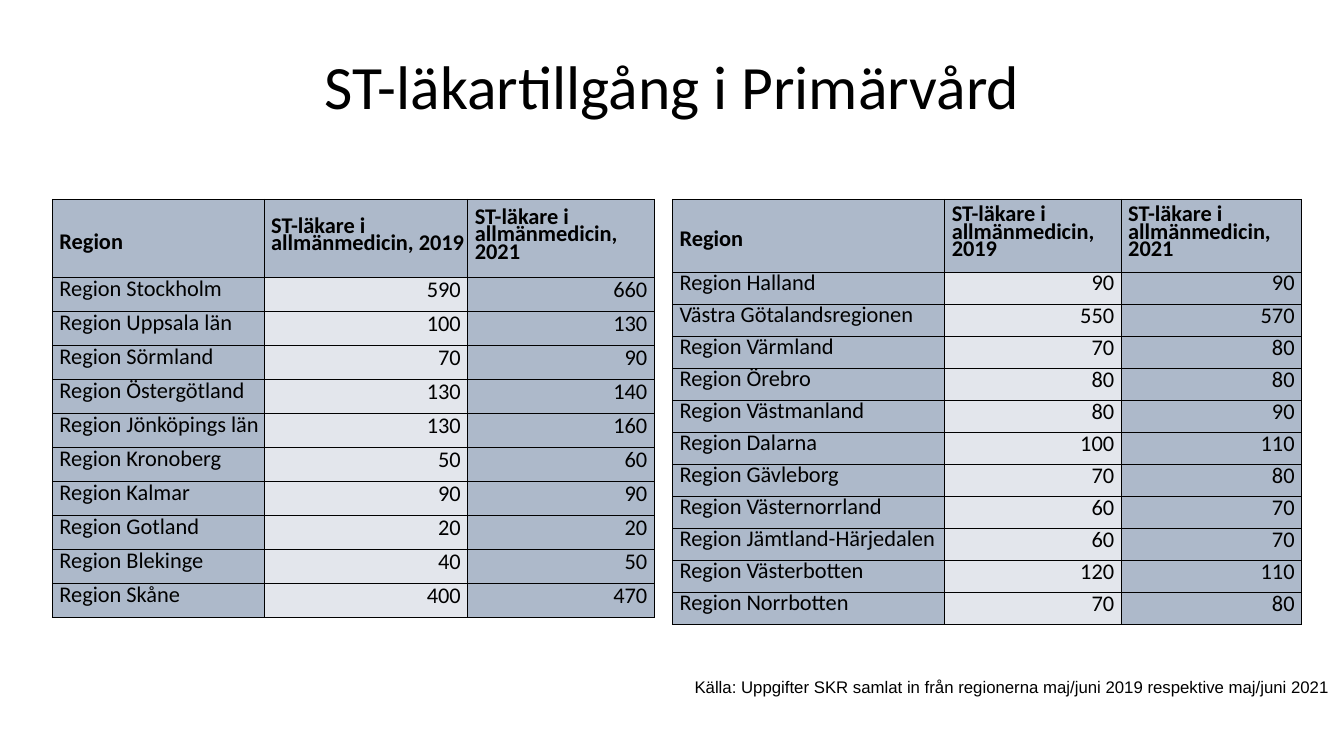
import pptx
import pptx.dml.color
import pptx.enum.text
import pptx.oxml
import pptx.oxml.ns
import pptx.util

TITLE = "ST-läkartillgång i Primärvård"
SOURCE = "Källa: Uppgifter SKR samlat in från regionerna maj/juni 2019 respektive maj/juni 2021"
HEADINGS = [
    ["Region"],
    ["ST-läkare i", "allmänmedicin, 2019"],
    ["ST-läkare i", "allmänmedicin, 2021"],
]
TABLES = [
    {
        "left": 0.52, "height": 4.15, "header": 0.77, "columns": [2.1, 2.02, 1.85],
        "rows": [
            ("Region Stockholm", 590, 660),
            ("Region Uppsala län", 100, 130),
            ("Region Sörmland", 70, 90),
            ("Region Östergötland", 130, 140),
            ("Region Jönköpings län", 130, 160),
            ("Region Kronoberg", 50, 60),
            ("Region Kalmar", 90, 90),
            ("Region Gotland", 20, 20),
            ("Region Blekinge", 40, 50),
            ("Region Skåne", 400, 470),
        ],
    },
    {
        "left": 6.67, "height": 4.22, "header": 0.72, "columns": [2.7, 1.75, 1.79],
        "rows": [
            ("Region Halland", 90, 90),
            ("Västra Götalandsregionen", 550, 570),
            ("Region Värmland", 70, 80),
            ("Region Örebro", 80, 80),
            ("Region Västmanland", 80, 90),
            ("Region Dalarna", 100, 110),
            ("Region Gävleborg", 70, 80),
            ("Region Västernorrland", 60, 70),
            ("Region Jämtland-Härjedalen", 60, 70),
            ("Region Västerbotten", 120, 110),
            ("Region Norrbotten", 70, 80),
        ],
    },
]
TABLE_TOP = 1.98
INDENT = 0.07
COLORS = {"text": "000000", "border": "000000", "blue": "ADB9CA", "pale": "E3E6EC"}

Inches = pptx.util.Inches
Pt = pptx.util.Pt
ALIGN = pptx.enum.text.PP_ALIGN
MIDDLE = pptx.enum.text.MSO_ANCHOR.MIDDLE


def color(name):
    return pptx.dml.color.RGBColor.from_string(COLORS[name])


def add_text(paragraph, text, size, font="Calibri", bold=False):
    run = paragraph.add_run()
    run.text = text
    run.font.size = Pt(size)
    run.font.name = font
    run.font.bold = bold
    run.font.color.rgb = color("text")


def add_text_box(slide, position, text, size, font, wrap):
    frame = slide.shapes.add_textbox(*map(Inches, position)).text_frame
    frame.word_wrap = wrap
    frame.vertical_anchor = MIDDLE
    add_text(frame.paragraphs[0], text, size, font)
    return frame.paragraphs[0]


def add_borders(cell):
    properties = cell._tc.get_or_add_tcPr()
    for index, side in enumerate(("lnL", "lnR", "lnT", "lnB")):
        properties.insert(index, pptx.oxml.parse_xml(
            f'<a:{side} {pptx.oxml.ns.nsdecls("a")} w="12700"><a:solidFill>'
            f'<a:srgbClr val="{COLORS["border"]}"/></a:solidFill></a:{side}>'))


def fill_cell(cell, lines, spacings, fill, bold, align):
    cell.margin_left = cell.margin_right = Inches(0)
    cell.margin_top = cell.margin_bottom = Inches(0)
    if align == ALIGN.RIGHT:
        cell.margin_right = Inches(INDENT)
    else:
        cell.margin_left = Inches(INDENT)
    cell.vertical_anchor = MIDDLE
    cell.fill.solid()
    cell.fill.fore_color.rgb = color(fill)
    add_borders(cell)
    frame = cell.text_frame
    for index, (line, spacing) in enumerate(zip(lines, spacings)):
        paragraph = frame.add_paragraph() if index else frame.paragraphs[0]
        paragraph.alignment = align
        paragraph.line_spacing = Pt(spacing)
        add_text(paragraph, line, 16, bold=bold)


def add_region_table(slide, data):
    count = len(data["rows"])
    table = slide.shapes.add_table(
        count + 1, len(HEADINGS), Inches(data["left"]), Inches(TABLE_TOP),
        Inches(sum(data["columns"])), Inches(data["height"])).table
    table.first_row = table.horz_banding = False
    for column, width in zip(table.columns, data["columns"]):
        column.width = Inches(width)
    row_height = (data["height"] - data["header"]) / count
    for index, row in enumerate(table.rows):
        row.height = Inches(row_height if index else data["header"])
    for index, lines in enumerate(HEADINGS):
        spacings = (13.4, 12.4) if index else (12.4,)
        fill_cell(table.cell(0, index), lines, spacings, "blue", True, ALIGN.LEFT)
    table.cell(0, 0).margin_top = Inches(0.16)
    for row_index, values in enumerate(data["rows"], 1):
        for index, value in enumerate(values):
            fill_cell(
                table.cell(row_index, index), [str(value)],
                (12.6 if index else 11.4,), "pale" if index == 1 else "blue",
                False, ALIGN.RIGHT if index else ALIGN.LEFT)


def main():
    presentation = pptx.Presentation()
    presentation.slide_width = Inches(13.33)
    presentation.slide_height = Inches(7.5)
    slide = presentation.slides.add_slide(presentation.slide_layouts[6])
    title = add_text_box(slide, (0.92, 0.16, 11.5, 1.45), TITLE, 44, "Calibri", True)
    title.alignment = ALIGN.CENTER
    title.line_spacing = 0.9
    add_text_box(slide, (6.79, 6.66, 6.5, 0.3), SOURCE, 12, "Arial", False)
    for data in TABLES:
        add_region_table(slide, data)
    presentation.save("out.pptx")


if __name__ == "__main__":
    main()
